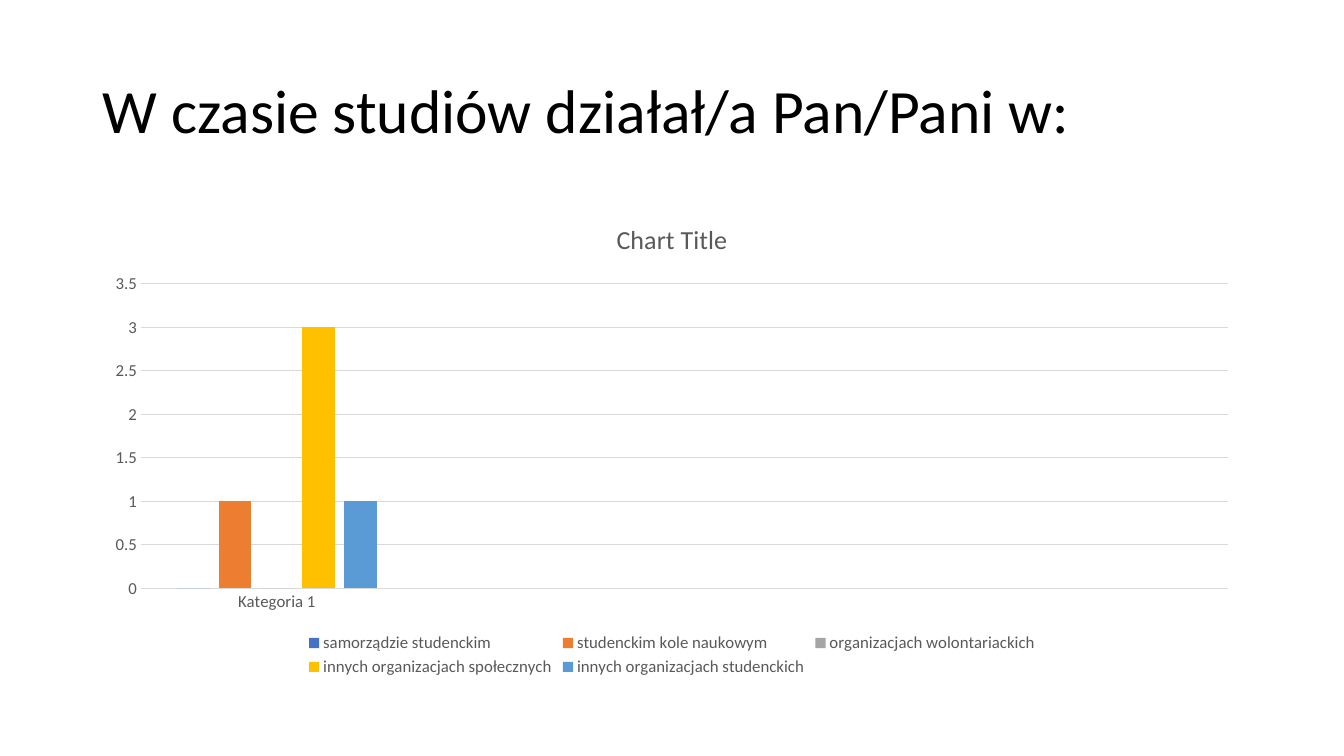
import dataclasses

import pptx
import pptx.chart.axis
import pptx.chart.chart
import pptx.chart.data
import pptx.dml.color
import pptx.enum.chart
import pptx.enum.text
import pptx.text.text
import pptx.util

FONT = "Calibri"
COLOURS = {
    "background": "FFFFFF",
    "title": "000000",
    "label": "595959",
    "grid": "D9D9D9",
    "blue": "4472C4",
    "orange": "ED7D31",
    "grey": "A5A5A5",
    "yellow": "FFC000",
    "light blue": "5B9BD5",
}
CATEGORIES = ["Kategoria 1", "", "", ""]


@dataclasses.dataclass(frozen=True)
class Activity:
    name: str
    answers: int
    colour: str


ACTIVITIES = [
    Activity("samorządzie studenckim", 0, "blue"),
    Activity("studenckim kole naukowym", 1, "orange"),
    Activity("organizacjach wolontariackich", 0, "grey"),
    Activity("innych organizacjach społecznych", 3, "yellow"),
    Activity("innych organizacjach studenckich", 1, "light blue"),
]


def rgb(name: str) -> pptx.dml.color.RGBColor:
    return pptx.dml.color.RGBColor.from_string(COLOURS[name])


def format_font(font: pptx.text.text.Font, size: float, colour: str) -> None:
    font.name = FONT
    font.size = pptx.util.Pt(size)
    font.bold = False
    font.color.rgb = rgb(colour)


def write_text(
    frame: pptx.text.text.TextFrame,
    text: str,
    *,
    size: float,
    colour: str,
    align: pptx.enum.text.PP_ALIGN,
    line_spacing: float = 1.0,
) -> None:
    para = frame.paragraphs[0]
    para.alignment = align
    para.line_spacing = line_spacing
    span = para.add_run()
    span.text = text
    format_font(span.font, size, colour)


def draw_grey_line(line: pptx.dml.line.LineFormat) -> None:
    line.color.rgb = rgb("grid")
    line.width = pptx.util.Pt(0.75)


def format_axes(chart: pptx.chart.chart.Chart) -> None:
    for axis in (chart.category_axis, chart.value_axis):
        axis.major_tick_mark = pptx.enum.chart.XL_TICK_MARK.NONE
        axis.minor_tick_mark = pptx.enum.chart.XL_TICK_MARK.NONE
        format_font(axis.tick_labels.font, 12, "label")
    chart.category_axis.has_major_gridlines = False
    draw_grey_line(chart.category_axis.format.line)
    chart.value_axis.has_major_gridlines = True
    draw_grey_line(chart.value_axis.major_gridlines.format.line)
    chart.value_axis.format.line.fill.background()


def format_legend(chart: pptx.chart.chart.Chart) -> None:
    chart.has_legend = True
    chart.legend.position = pptx.enum.chart.XL_LEGEND_POSITION.BOTTOM
    chart.legend.include_in_layout = False
    format_font(chart.legend.font, 12, "label")


def add_activity_chart(page: pptx.slide.Slide) -> None:
    chart_data = pptx.chart.data.CategoryChartData()
    chart_data.categories = CATEGORIES
    unanswered = [None] * (len(CATEGORIES) - 1)
    for activity in ACTIVITIES:
        chart_data.add_series(activity.name, [activity.answers, *unanswered])
    chart = page.shapes.add_chart(
        pptx.enum.chart.XL_CHART_TYPE.COLUMN_CLUSTERED,
        pptx.util.Cm(2.33),
        pptx.util.Cm(5.07),
        pptx.util.Cm(29.21),
        pptx.util.Cm(12.09),
        chart_data,
    ).chart
    format_font(chart.font, 10, "title")
    chart.has_title = True
    write_text(
        chart.chart_title.text_frame,
        "Chart Title",
        size=18.6,
        colour="label",
        align=pptx.enum.text.PP_ALIGN.CENTER,
    )
    chart.chart_title.include_in_layout = False

    plot = chart.plots[0]
    plot.gap_width = 219
    plot.overlap = -27
    plot.vary_by_categories = False
    for series, activity in zip(plot.series, ACTIVITIES):
        series.invert_if_negative = False
        series.format.fill.solid()
        series.format.fill.fore_color.rgb = rgb(activity.colour)
    format_axes(chart)
    format_legend(chart)


def add_title(page: pptx.slide.Slide) -> None:
    box = page.shapes.title
    box.left, box.top = pptx.util.Cm(2.33), pptx.util.Cm(1.01)
    box.width, box.height = pptx.util.Cm(29.21), pptx.util.Cm(3.68)
    frame = box.text_frame
    frame.word_wrap = True
    frame.auto_size = pptx.enum.text.MSO_AUTO_SIZE.NONE
    frame.vertical_anchor = pptx.enum.text.MSO_ANCHOR.MIDDLE
    write_text(
        frame,
        "W czasie studiów działał/a Pan/Pani w:",
        size=44,
        colour="title",
        align=pptx.enum.text.PP_ALIGN.LEFT,
        line_spacing=0.9,
    )


def main() -> None:
    deck = pptx.Presentation()
    deck.slide_width = pptx.util.Cm(33.87)
    deck.slide_height = pptx.util.Cm(19.05)
    title_only = deck.slide_layouts.get_by_name("Title Only")
    page = deck.slides.add_slide(title_only)
    page.background.fill.solid()
    page.background.fill.fore_color.rgb = rgb("background")
    add_title(page)
    add_activity_chart(page)
    deck.save("out.pptx")


if __name__ == "__main__":
    main()
